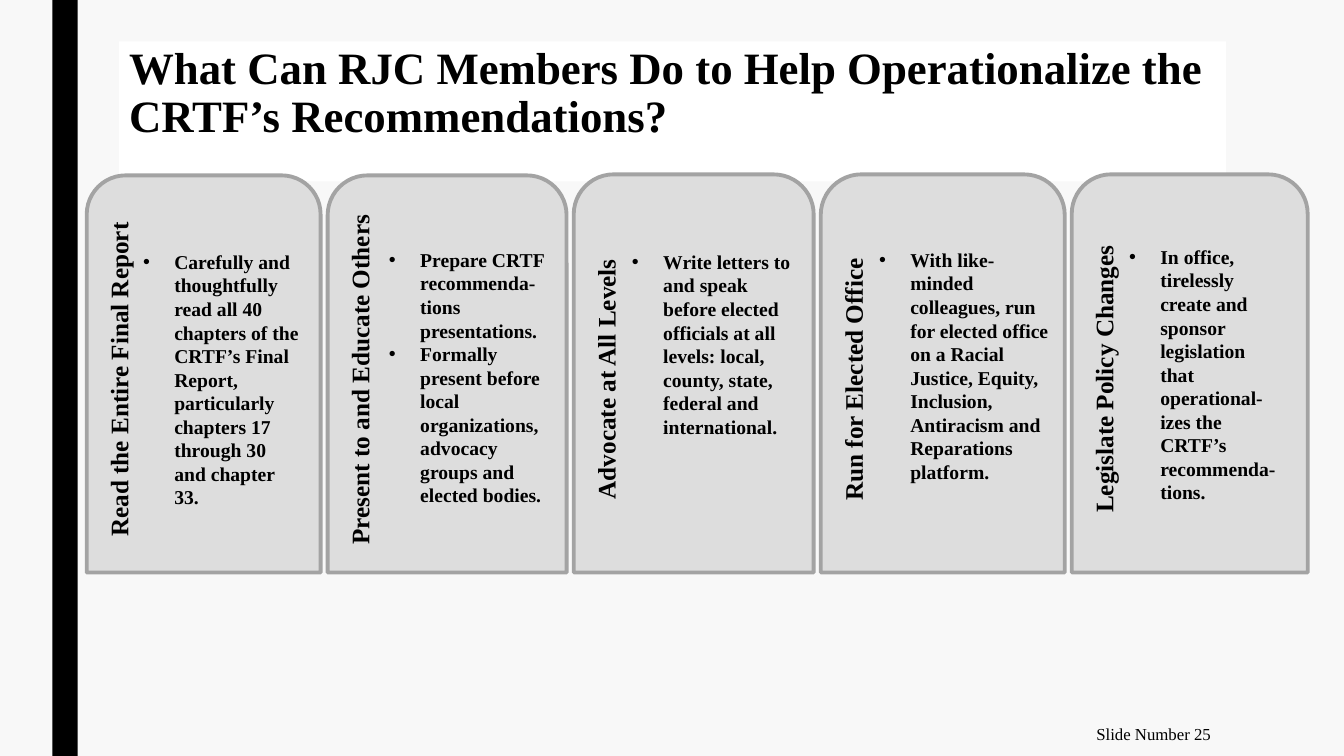
from dataclasses import dataclass

from lxml import etree
from pptx import Presentation
from pptx.dml.color import RGBColor
from pptx.enum.shapes import MSO_SHAPE as Preset
from pptx.enum.text import MSO_ANCHOR as Anchor, MSO_AUTO_SIZE as AutoSize, PP_ALIGN as Align
from pptx.oxml.ns import qn
from pptx.util import Inches, Pt


@dataclass(frozen=True)
class Theme:
    font: str = "Times New Roman"
    ink: RGBColor = RGBColor(0x00, 0x00, 0x00)
    background: RGBColor = RGBColor(0xF8, 0xF8, 0xF8)
    title_fill: RGBColor = RGBColor(0xFF, 0xFF, 0xFF)
    panel_fill: RGBColor = RGBColor(0xDD, 0xDD, 0xDD)
    panel_line: RGBColor = RGBColor(0xA3, 0xA3, 0xA3)
    title_size: Pt = Pt(32)
    label_size: Pt = Pt(18)
    list_size: Pt = Pt(14)
    number_size: Pt = Pt(12)


@dataclass(frozen=True)
class Panel:
    label: str
    items: tuple
    top: float
    width: float
    list_left: float  # from the panel's left edge
    list_top: float
    list_width: float


THEME = Theme()
PANEL_LEFT, PANEL_GAP, PANEL_BOTTOM = 0.86, 0.07, 5.68
LIST_HEIGHT = 2.7
BULLET_INDENT = Inches(0.31)

PANELS = (
    Panel("Read the Entire Final Report",
          ("Carefully and thoughtfully read all 40 chapters of the CRTF’s Final Report, "
           "particularly chapters 17 through 30 and chapter 33.",),
          1.74, 2.32, 0.46, 2.43, 1.75),
    Panel("Present to and Educate Others",
          ("Prepare CRTF recommenda-tions presentations.",
           "Formally present before local organizations, advocacy groups and elected bodies."),
          1.74, 2.37, 0.51, 2.41, 1.86),
    Panel("Advocate at All Levels",
          ("Write letters to and speak before elected officials at all levels: "
           "local, county, state, federal and international.",),
          1.73, 2.38, 0.48, 2.43, 1.83),
    Panel("Run for Elected Office",
          ("With like-minded colleagues, run for elected office on a Racial Justice, Equity, "
           "Inclusion, Antiracism and Reparations platform.",),
          1.73, 2.42, 0.48, 2.41, 1.94),
    Panel("Legislate Policy Changes",
          ("In office, tirelessly create and sponsor legislation that operational-izes "
           "the CRTF’s recommenda-tions.",),
          1.73, 2.34, 0.47, 2.38, 1.7),
)


def style(paragraph, size, bold=True, align=Align.LEFT):
    paragraph.alignment = align
    font = paragraph.font
    font.name, font.size, font.bold = THEME.font, size, bold
    font.color.rgb = THEME.ink


def add_bullet(paragraph):
    properties = paragraph._p.get_or_add_pPr()
    properties.set("marL", str(BULLET_INDENT))
    properties.set("indent", str(-BULLET_INDENT))
    etree.SubElement(properties, qn("a:buFont")).set("typeface", "Arial")
    etree.SubElement(properties, qn("a:buChar")).set("char", "•")


def add_side_bar(slide, left, top, width, height):
    bar = slide.shapes.add_shape(Preset.RECTANGLE, left, top, width, height)
    bar.shadow.inherit = False
    bar.fill.solid()
    bar.fill.fore_color.rgb = THEME.ink
    bar.line.fill.background()


def place_title(slide, left, top, width, height):
    title = slide.shapes.title
    title.left, title.top, title.width, title.height = left, top, width, height
    title.fill.solid()
    title.fill.fore_color.rgb = THEME.title_fill
    frame = title.text_frame
    frame.text = "What Can RJC Members Do to Help Operationalize the CRTF’s Recommendations?"
    frame.vertical_anchor = Anchor.TOP
    frame.auto_size = AutoSize.NONE
    frame.paragraphs[0].line_spacing = 0.89
    style(frame.paragraphs[0], THEME.title_size)


def add_list(slide, items, left, top, width, height):
    frame = slide.shapes.add_textbox(left, top, width, height).text_frame
    frame.word_wrap = True
    frame.auto_size = AutoSize.SHAPE_TO_FIT_TEXT
    for index, item in enumerate(items):
        paragraph = frame.add_paragraph() if index else frame.paragraphs[0]
        paragraph.text = item
        add_bullet(paragraph)
        style(paragraph, THEME.list_size)


def add_panel(slide, panel, left):
    # Round-topped card with its label turned upwards
    card = slide.shapes.add_shape(
        Preset.ROUND_2_SAME_RECTANGLE, Inches(left), Inches(panel.top),
        Inches(panel.width), Inches(PANEL_BOTTOM - panel.top))
    card.shadow.inherit = False
    card.fill.solid()
    card.fill.fore_color.rgb = THEME.panel_fill
    card.line.color.rgb = THEME.panel_line
    card.line.width = Pt(2.75)
    frame = card.text_frame
    frame.text = panel.label
    frame.vertical_anchor = Anchor.TOP
    frame._txBody.bodyPr.set("vert", "vert270")
    style(frame.paragraphs[0], THEME.label_size, align=Align.CENTER)

    # Actions beside the label
    add_list(slide, panel.items, Inches(left + panel.list_left), Inches(panel.list_top),
             Inches(panel.list_width), Inches(LIST_HEIGHT))


def add_slide_number(slide, left, top, width, height):
    frame = slide.shapes.add_textbox(left, top, width, height).text_frame
    frame.word_wrap = True
    frame.vertical_anchor = Anchor.MIDDLE
    frame.text = "Slide Number 25"
    style(frame.paragraphs[0], THEME.number_size, bold=False, align=Align.RIGHT)


def build_actions_slide(presentation):
    slide = presentation.slides.add_slide(presentation.slide_layouts.get_by_name("Title Only"))
    slide.background.fill.solid()
    slide.background.fill.fore_color.rgb = THEME.background

    add_side_bar(slide, Inches(0.52), 0, Inches(0.25), presentation.slide_height)
    place_title(slide, Inches(1.18), Inches(0.41), Inches(10.98), Inches(1.39))

    # Row of panels, each one gap after the last
    left = PANEL_LEFT
    for panel in PANELS:
        add_panel(slide, panel, left)
        left += panel.width + PANEL_GAP

    add_slide_number(slide, Inches(10.36), Inches(7.06), Inches(1.75), Inches(0.44))


def main():
    presentation = Presentation()
    presentation.slide_width, presentation.slide_height = Inches(13.33), Inches(7.5)
    build_actions_slide(presentation)
    presentation.save("out.pptx")


if __name__ == "__main__":
    main()
